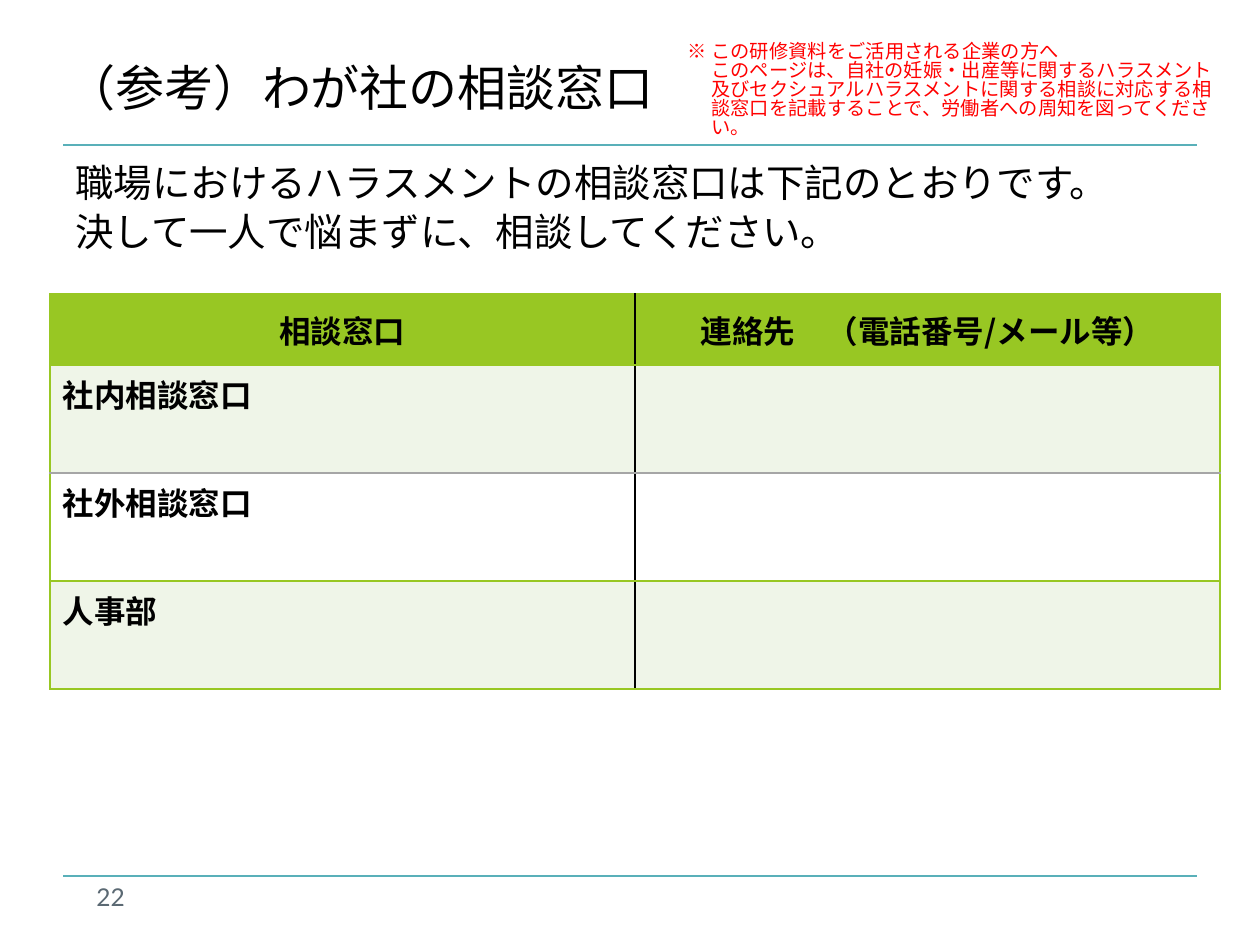
from dataclasses import dataclass

from lxml import etree
from pptx import Presentation
from pptx.dml.color import RGBColor
from pptx.enum.shapes import MSO_CONNECTOR
from pptx.enum.text import MSO_ANCHOR, PP_ALIGN
from pptx.oxml.ns import qn
from pptx.util import Emu, Pt

STRAIGHT = MSO_CONNECTOR.STRAIGHT
TOP, MIDDLE, BOTTOM = MSO_ANCHOR.TOP, MSO_ANCHOR.MIDDLE, MSO_ANCHOR.BOTTOM
LEFT, CENTER = PP_ALIGN.LEFT, PP_ALIGN.CENTER

PX = 914400 / 126
JAPANESE, LATIN = "Noto Sans CJK JP", "Lato"
BLACK, WHITE, RED = "000000", "FFFFFF", "FF0000"
TEAL, SLATE = "59B0B9", "5B6973"
GREEN, PALE_GREEN, GRAY = "98C723", "EFF5E8", "A6A6A6"


@dataclass
class Style:
    size: int
    color: str = BLACK
    font: str = JAPANESE
    bold: bool = False
    align: PP_ALIGN = LEFT
    line_spacing: float = 1.0
    space_before: int = 0


@dataclass
class TextBox:
    left: int
    top: int
    width: int
    height: int
    lines: list[str]
    style: Style
    anchor: MSO_ANCHOR = TOP


def px(length: int) -> Emu:
    return Emu(round(length * PX))


def rgb(color: str) -> RGBColor:
    return RGBColor.from_string(color)


def style_paragraph(para, style: Style) -> None:
    para.alignment = style.align
    para.line_spacing = style.line_spacing
    para.space_before = Pt(style.space_before)
    font = para.font
    font.size = Pt(style.size)
    font.bold = style.bold
    font.color.rgb = rgb(style.color)
    font.name = style.font
    properties = para._p.pPr.find(qn("a:defRPr"))
    east_asian = etree.SubElement(properties, qn("a:ea"))
    east_asian.set("typeface", style.font)


def add_text(slide, item: TextBox):
    box = slide.shapes.add_textbox(
        px(item.left), px(item.top), px(item.width), px(item.height))
    frame = box.text_frame
    frame.word_wrap = True
    frame.vertical_anchor = item.anchor
    frame.text = "\n".join(item.lines)
    for para in frame.paragraphs:
        style_paragraph(para, item.style)
    return frame


def add_rule(slide, y: int) -> None:
    rule = slide.shapes.add_connector(STRAIGHT, px(63), px(y), px(1197), px(y))
    rule.line.color.rgb = rgb(TEAL)
    rule.line.width = Pt(0.75)
    etree.SubElement(rule._element.spPr, qn("a:effectLst"))


def set_borders(cell, colors: dict[str, str]) -> None:
    properties = cell._tc.get_or_add_tcPr()
    for position, (side, color) in enumerate(colors.items()):
        line = etree.Element(qn(f"a:{side}"), w=str(Pt(1)))
        fill = etree.SubElement(line, qn("a:solidFill"))
        etree.SubElement(fill, qn("a:srgbClr"), val=color)
        properties.insert(position, line)


def add_contact_table(slide, rows: list[list[str]]) -> None:
    heights = [71] + [108] * (len(rows) - 1)
    table = slide.shapes.add_table(
        len(rows), 2, px(50), px(294), px(1170), px(sum(heights))).table
    for column in table.columns:
        column.width = px(585)
    # Colours of the horizontal rules, from the top edge to the bottom edge
    rules = [GREEN, GREEN, GRAY, GREEN, GREEN]
    fills = [GREEN, PALE_GREEN, WHITE, PALE_GREEN]
    for r, texts in enumerate(rows):
        table.rows[r].height = px(heights[r])
        is_header = r == 0
        style = Style(18, bold=True, align=CENTER if is_header else LEFT)
        for c, text in enumerate(texts):
            cell = table.cell(r, c)
            cell.text = text
            cell.vertical_anchor = MIDDLE if is_header else TOP
            cell.fill.solid()
            cell.fill.fore_color.rgb = rgb(fills[r])
            style_paragraph(cell.text_frame.paragraphs[0], style)
            set_borders(cell, {
                "lnL": BLACK if c else GREEN,
                "lnR": GREEN if c else BLACK,
                "lnT": rules[r],
                "lnB": rules[r + 1],
            })


def main() -> None:
    deck = Presentation()
    deck.slide_width, deck.slide_height = px(1260), px(945)
    slide = deck.slides.add_slide(deck.slide_layouts[6])

    # Rules and page number
    for y in (876, 145):
        add_rule(slide, y)
    add_text(slide, TextBox(84, 876, 273, 50, ["22"], Style(14, SLATE, LATIN)))

    # Title and introduction
    add_text(slide, TextBox(
        54, 8, 1134, 115, ["（参考）わが社の相談窓口"], Style(28), BOTTOM))
    add_text(slide, TextBox(
        63, 161, 1134, 680,
        ["職場におけるハラスメントの相談窓口は下記のとおりです。",
         "決して一人で悩まずに、相談してください。"],
        Style(22, line_spacing=0.83, space_before=6)))

    # Contact table
    add_contact_table(slide, [
        ["相談窓口", "連絡先　（電話番号/メール等）"],
        ["社内相談窓口", ""],
        ["社外相談窓口", ""],
        ["人事部", ""],
    ])

    # Note to companies, with a hanging reference mark
    note = add_text(slide, TextBox(
        675, 6, 563, 139,
        ["※\tこの研修資料をご活用される企業の方へ",
         "このページは、自社の妊娠・出産等に関するハラスメント及びセクシュアル"
         "ハラスメントに関する相談に対応する相談窓口を記載することで、"
         "労働者への周知を図ってください。"],
        Style(11, RED, line_spacing=0.83), BOTTOM))
    for para, indent in zip(note.paragraphs, (-24, 0)):
        para._p.pPr.set("marL", str(px(24)))
        para._p.pPr.set("indent", str(px(indent)))

    deck.save("out.pptx")


if __name__ == "__main__":
    main()
